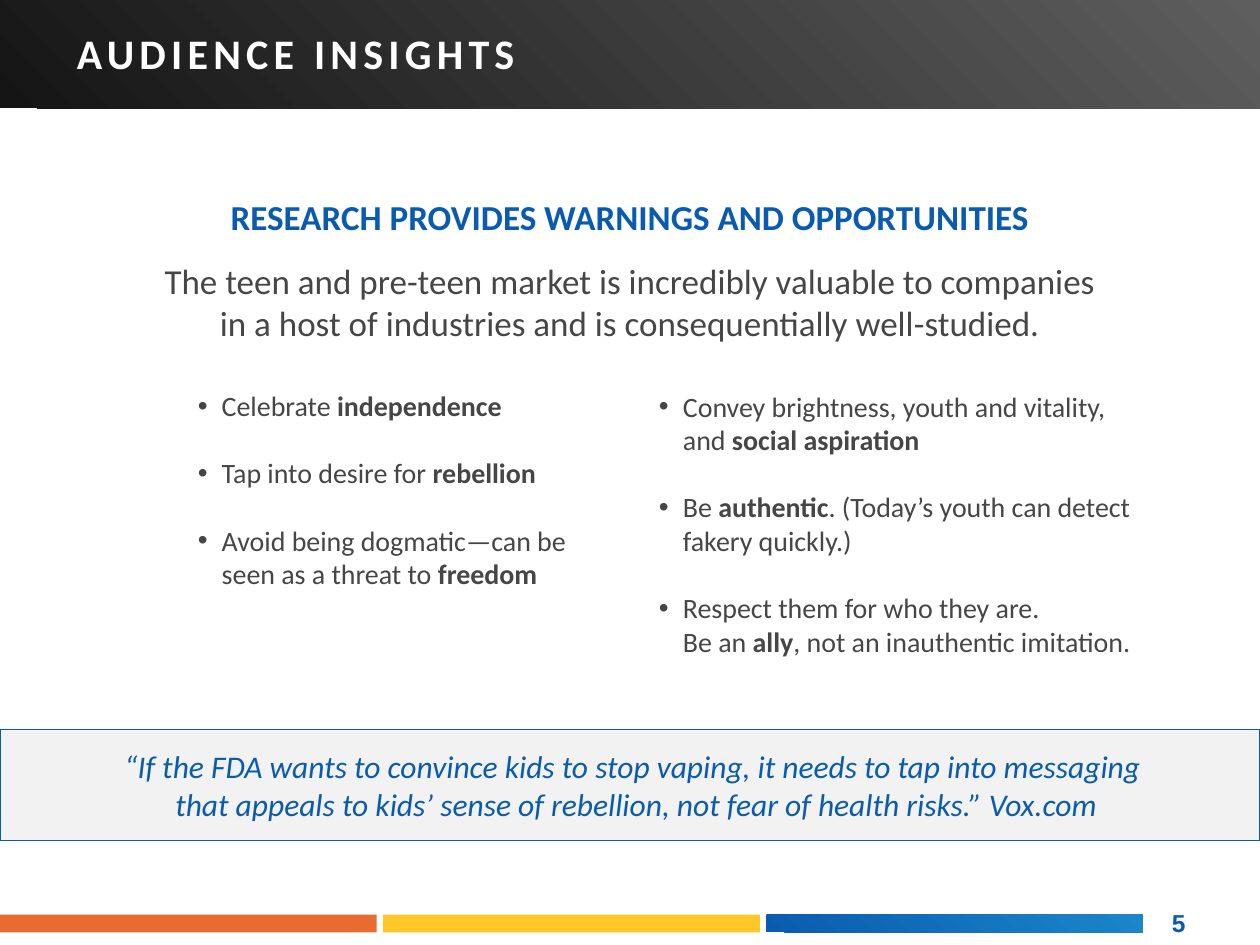
from lxml.etree import SubElement
from pptx import Presentation
from pptx.dml.color import RGBColor
from pptx.enum.shapes import MSO_SHAPE
from pptx.enum.text import MSO_ANCHOR, PP_ALIGN
from pptx.oxml.ns import qn
from pptx.util import Inches, Pt

BLUE, GRAY, WHITE = "0A5BAF", "464646", "FFFFFF"


def add_band(left, top, width, height, color, end_color=None):
    """Add a full rectangle; an end colour makes it a diagonal gradient."""
    band = page.shapes.add_shape(
        MSO_SHAPE.RECTANGLE, Inches(left), Inches(top), Inches(width), Inches(height))
    band.shadow.inherit = False
    band.line.fill.background()
    if end_color:
        band.fill.gradient()
        band.fill.gradient_angle = 45
        for stop, stop_color in zip(band.fill.gradient_stops, (color, end_color)):
            stop.color.rgb = RGBColor.from_string(stop_color)
    else:
        band.fill.solid()
        band.fill.fore_color.rgb = RGBColor.from_string(color)
    return band


def write_text(box, paragraphs, size, color, font="Calibri", bold=False, italic=False,
               align=PP_ALIGN.LEFT, insets=(0.06, 0.06, 0.06, 0.06), wrap=True,
               anchor=MSO_ANCHOR.MIDDLE, bullet=False, spacing=None):
    """Fill a box; within a paragraph, every second part between * marks is bold."""
    frame = box.text_frame
    frame.word_wrap = wrap
    frame.vertical_anchor = anchor
    (frame.margin_left, frame.margin_top,
     frame.margin_right, frame.margin_bottom) = map(Inches, insets)
    for index, text in enumerate(paragraphs):
        para = frame.add_paragraph() if index else frame.paragraphs[0]
        para.alignment = align
        if bullet:
            properties = para._p.get_or_add_pPr()
            properties.set("marL", str(Inches(0.19)))
            properties.set("indent", str(-Inches(0.19)))
            SubElement(properties, qn("a:buFont")).set("typeface", "Arial")
            SubElement(properties, qn("a:buChar")).set("char", "•")
            if index:
                para.space_before = Pt(19.2)
        for part_index, part in enumerate(text.split("*")):
            for line_index, line in enumerate(part.split("\n")):
                if line_index:
                    para.add_line_break()
                if not line:
                    continue
                span = para.add_run()
                span.text = line
                span.font.size = Pt(size)
                span.font.name = font
                span.font.bold = bold or part_index % 2 == 1
                span.font.italic = italic
                span.font.color.rgb = RGBColor.from_string(color)
                if spacing:
                    span.font._element.set("spc", str(spacing * 100))


deck = Presentation()
deck.slide_width, deck.slide_height = Inches(10), Inches(7.5)
page = deck.slides.add_slide(deck.slide_layouts[6])

# Footer bars and page number
bar_colors = [("E86C31",), ("FFC728",), (BLUE, "1B86CA")]
for column, colors in enumerate(bar_colors):
    add_band(3.04 * column, 7.26, 2.99, 0.14, *colors)
number_box = page.shapes.add_textbox(Inches(9.19), Inches(7.15), Inches(0.28), Inches(0.35))
write_text(number_box, ["5"], 14, BLUE, font="Arial", bold=True,
           insets=(0.11, 0.06, 0.06, 0.06))

# Quote
quote_band = add_band(0, 5.79, 10, 0.88, "F2F2F2")
quote_band.line.color.rgb = RGBColor.from_string(BLUE)
quote_band.line.width = Pt(1)
write_text(quote_band, [
    "“If the FDA wants to convince kids to stop vaping, it needs to tap into messaging \n"
    "that appeals to kids’ sense of rebellion, not fear of health risks.” Vox.com"],
    18, BLUE, italic=True, align=PP_ALIGN.CENTER, insets=(0.2, 0.1, 0.1, 0.1))

# Heading and introduction
heading_box = page.shapes.add_textbox(Inches(0), Inches(1.5), Inches(10), Inches(0.44))
write_text(heading_box, ["RESEARCH PROVIDES WARNINGS AND OPPORTUNITIES"], 20, BLUE,
           bold=True, align=PP_ALIGN.CENTER, anchor=MSO_ANCHOR.TOP,
           insets=(0.1, 0.05, 0.1, 0.05))
intro_box = page.shapes.add_textbox(Inches(0), Inches(2), Inches(10), Inches(0.79))
write_text(intro_box, [
    "The teen and pre-teen market is incredibly valuable to companies\n"
    "in a host of industries and is consequentially well-studied."],
    20, GRAY, align=PP_ALIGN.CENTER)

# Title band
add_band(0, 0, 10, 0.86, "161515", "5E5E5E")
title_box = page.shapes.add_textbox(Inches(0.54), Inches(0.15), Inches(3.69), Inches(0.54))
write_text(title_box, ["AUDIENCE INSIGHTS"], 24, WHITE, bold=True, wrap=False,
           insets=(0.07, 0.07, 0.07, 0.07), spacing=3)

# Bullet columns
bullet_columns = [
    (1.51, 3.12, 1.73, [
        "Celebrate *independence*",
        "Tap into desire for *rebellion*",
        "Avoid being dogmatic—can be seen as a threat to *freedom*"]),
    (5.17, 3.99, 2.27, [
        "Convey brightness, youth and vitality, and *social aspiration*",
        "Be *authentic*. (Today’s youth can detect fakery quickly.)",
        "Respect them for who they are. \nBe an *ally*, not an inauthentic imitation."]),
]
for left, width, height, bullets in bullet_columns:
    bullet_box = page.shapes.add_textbox(
        Inches(left), Inches(3.02), Inches(width), Inches(height))
    write_text(bullet_box, bullets, 16, GRAY, bullet=True)

deck.save("out.pptx")
